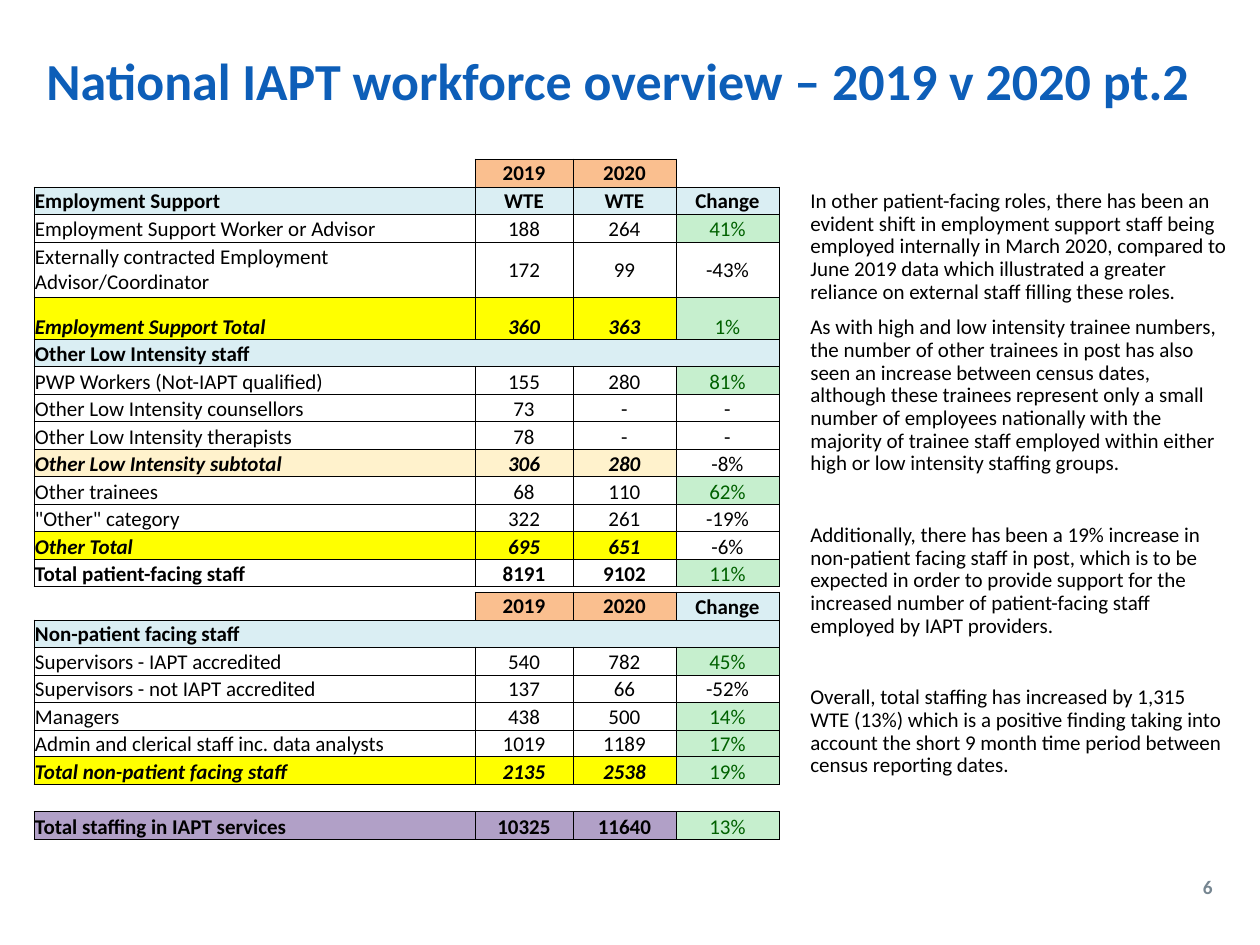
"""Build the workforce overview slide: two staffing tables beside a commentary."""
from typing import NamedTuple

from lxml.etree import SubElement
from pptx import Presentation
from pptx.dml.color import RGBColor
from pptx.enum.text import MSO_ANCHOR as Anchor, PP_ALIGN as Align
from pptx.oxml.ns import qn
from pptx.util import Pt

SCALE = 914400 / 126
PLAIN_GRID = "{2D5ABB26-0587-4C30-8999-92F81FD0307C}"
WIDTHS = (441, 98, 103, 103)
LEFT = 34


class Box(NamedTuple):
    left: int
    top: int
    width: int
    height: int


class Look(NamedTuple):
    fill: str = ""
    bold: bool = False
    slant: bool = False
    color: str = "000000"
    anchor: Anchor = Anchor.BOTTOM


class Row(NamedTuple):
    look: Look
    cells: tuple[str, ...]
    height: int = 0


class Para(NamedTuple):
    text: str
    before: float = 7.5


PLAIN = Look()
MID = Look(anchor=Anchor.MIDDLE)
BOLD = Look(bold=True)
YEAR = Look("FABF8F", True, anchor=Anchor.MIDDLE)
HEAD = Look("DAEEF3", True)
TOTAL = Look("FFFF00", True, True)
PART = Look("FFF2CC", True, True)
GRAND = Look("B1A0C7", True)
RISE = Look("C6EFCE", color="006100")

FACING = (
    Row(YEAR, ("", "2019", "2020", "")),
    Row(HEAD, ("Employment Support", "WTE", "WTE", "Change")),
    Row(PLAIN, ("Employment Support Worker or Advisor", "188", "264", "41%")),
    Row(MID, ("Externally contracted Employment Advisor/Coordinator", "172", "99", "-43%"), 55),
    Row(TOTAL, ("Employment Support Total", "360", "363", "1%"), 43),
    Row(HEAD, ("Other Low Intensity staff",)),
    Row(PLAIN, ("PWP Workers (Not-IAPT qualified)", "155", "280", "81%")),
    Row(PLAIN, ("Other Low Intensity counsellors", "73", "-", "-")),
    Row(PLAIN, ("Other Low Intensity therapists", "78", "-", "-")),
    Row(PART, ("Other Low Intensity subtotal", "306", "280", "-8%")),
    Row(PLAIN, ("Other trainees", "68", "110", "62%")),
    Row(PLAIN, ('"Other" category', "322", "261", "-19%")),
    Row(TOTAL, ("Other Total", "695", "651", "-6%")),
    Row(BOLD, ("Total patient-facing staff", "8191", "9102", "11%")),
)
SUPPORT = (
    Row(YEAR, ("", "2019", "2020", "Change")),
    Row(HEAD, ("Non-patient facing staff",)),
    Row(PLAIN, ("Supervisors - IAPT accredited", "540", "782", "45%")),
    Row(PLAIN, ("Supervisors - not IAPT accredited", "137", "66", "-52%")),
    Row(PLAIN, ("Managers", "438", "500", "14%")),
    Row(PLAIN, ("Admin and clerical staff inc. data analysts", "1019", "1189", "17%")),
    Row(TOTAL, ("Total non-patient facing staff", "2135", "2538", "19%")),
    Row(PLAIN, ("", "", "", "")),
    Row(GRAND, ("Total staffing in IAPT services", "10325", "11640", "13%")),
)
NOTES = (
    Para("In other patient-facing roles, there has been an evident shift in employment support staff "
         "being employed internally in March 2020, compared to June 2019 data which illustrated a "
         "greater reliance on external staff filling these roles.", 0),
    Para("As with high and low intensity trainee numbers, the number of other trainees in post has "
         "also seen an increase between census dates, although these trainees represent only a small "
         "number of employees nationally with the majority of trainee staff employed within either "
         "high or low intensity staffing groups."),
    Para("Additionally, there has been a 19% increase in non-patient facing staff in post, which is "
         "to be expected in order to provide support for the increased number of patient-facing staff "
         "employed by IAPT providers.", 28),
    Para("Overall, total staffing has increased by 1,315 WTE (13%) which is a positive finding taking "
         "into account the short 9 month time period between census reporting dates.", 28),
)


def px(size: int) -> int:
    return round(size * SCALE)


def paint(code: str) -> RGBColor:
    return RGBColor.from_string(code)


def add_run(para, text: str, size: float, look: Look) -> None:
    run = para.add_run()
    run.text = text
    font = run.font
    font.name, font.size = "Calibri", Pt(size)
    font.bold, font.italic = look.bold, look.slant
    font.color.rgb = paint(look.color)


def add_text(slide, box: Box, paras: tuple[Para, ...], size: float, look: Look,
             align: Align = Align.LEFT, pitch: float = 0.9) -> None:
    frame = slide.shapes.add_textbox(*map(px, box)).text_frame
    frame.word_wrap = True
    frame.vertical_anchor = look.anchor
    for i, item in enumerate(paras):
        para = frame.add_paragraph() if i else frame.paragraphs[0]
        para.alignment, para.line_spacing = align, pitch
        para.space_before = Pt(item.before)
        add_run(para, item.text, size, look)


def add_edges(cell, sides: str) -> None:
    props = cell._tc.get_or_add_tcPr()
    for side in sides:
        line = SubElement(props, qn(f"a:ln{side}"), w=str(Pt(0.5)))
        fill = SubElement(line, qn("a:solidFill"))
        SubElement(fill, qn("a:srgbClr"), val="000000")


def pick_look(row: Row, col: int) -> Look:
    text = row.cells[col]
    if text == "Change":
        return HEAD
    if col == 3:
        return PLAIN._replace(anchor=row.look.anchor) if text.startswith("-") else RISE
    return row.look


def fill_cell(cell, text: str, look: Look, col: int, sides: str) -> None:
    cell.margin_left = cell.margin_right = cell.margin_top = px(1)
    cell.margin_bottom = 0
    cell.vertical_anchor = look.anchor
    add_edges(cell, sides)
    if look.fill:
        cell.fill.solid()
        cell.fill.fore_color.rgb = paint(look.fill)
    else:
        cell.fill.background()
    para = cell.text_frame.paragraphs[0]
    para.alignment = Align.CENTER if col else Align.LEFT
    if text:
        add_run(para, text, 12, look)
    else:
        SubElement(para._p, qn("a:endParaRPr"), sz="1200")


def add_grid(slide, top: int, rows: tuple[Row, ...]) -> None:
    tall = [row.height or 28 - i % 2 for i, row in enumerate(rows)]
    box = Box(LEFT, top, sum(WIDTHS), sum(tall))
    table = slide.shapes.add_table(len(rows), len(WIDTHS), *map(px, box)).table
    table.first_row = table.horz_banding = False
    table._tbl.tblPr[0].text = PLAIN_GRID
    for col, width in enumerate(WIDTHS):
        table.columns[col].width = px(width)
    for i, row in enumerate(rows):
        table.rows[i].height = px(tall[i])
        wide = len(row.cells) == 1
        for col in range(len(WIDTHS)):
            text = "" if wide and col else row.cells[col]
            if text or wide:
                look, sides = row.look if wide else pick_look(row, col), "LRTB"
            else:
                look, sides = PLAIN, "TB" if i else "LB" if col else "RB"
            fill_cell(table.cell(i, col), text, look, col, sides)
        if wide:
            table.cell(i, 0).merge(table.cell(i, len(WIDTHS) - 1))


def main() -> None:
    deck = Presentation()
    deck.slide_width, deck.slide_height = px(1260), px(945)
    slide = deck.slides.add_slide(deck.slide_layouts[6])
    add_text(slide, Box(1002, 862, 223, 50), (Para("6", 0),), 11,
             MID._replace(bold=True, color="768691"), Align.RIGHT, 1.0)
    add_text(slide, Box(LEFT, 23, 1191, 122),
             (Para("National IAPT workforce overview – 2019 v 2020 pt.2", 0),), 29.7,
             MID._replace(bold=True, color="0D5EB8"))
    add_grid(slide, 159, FACING)
    add_grid(slide, 592, SUPPORT)
    add_text(slide, Box(798, 184, 443, 611), NOTES, 12, Look(anchor=Anchor.TOP))
    deck.save("out.pptx")


if __name__ == "__main__":
    main()
